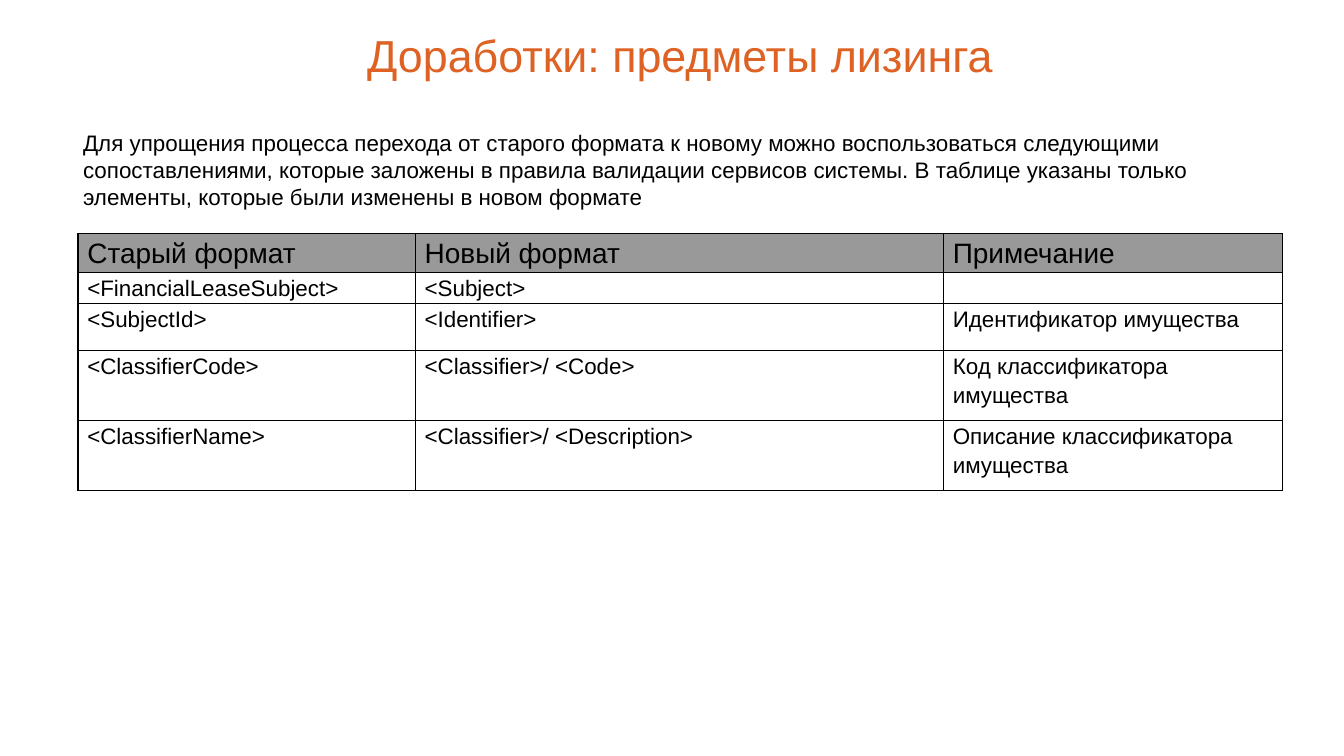
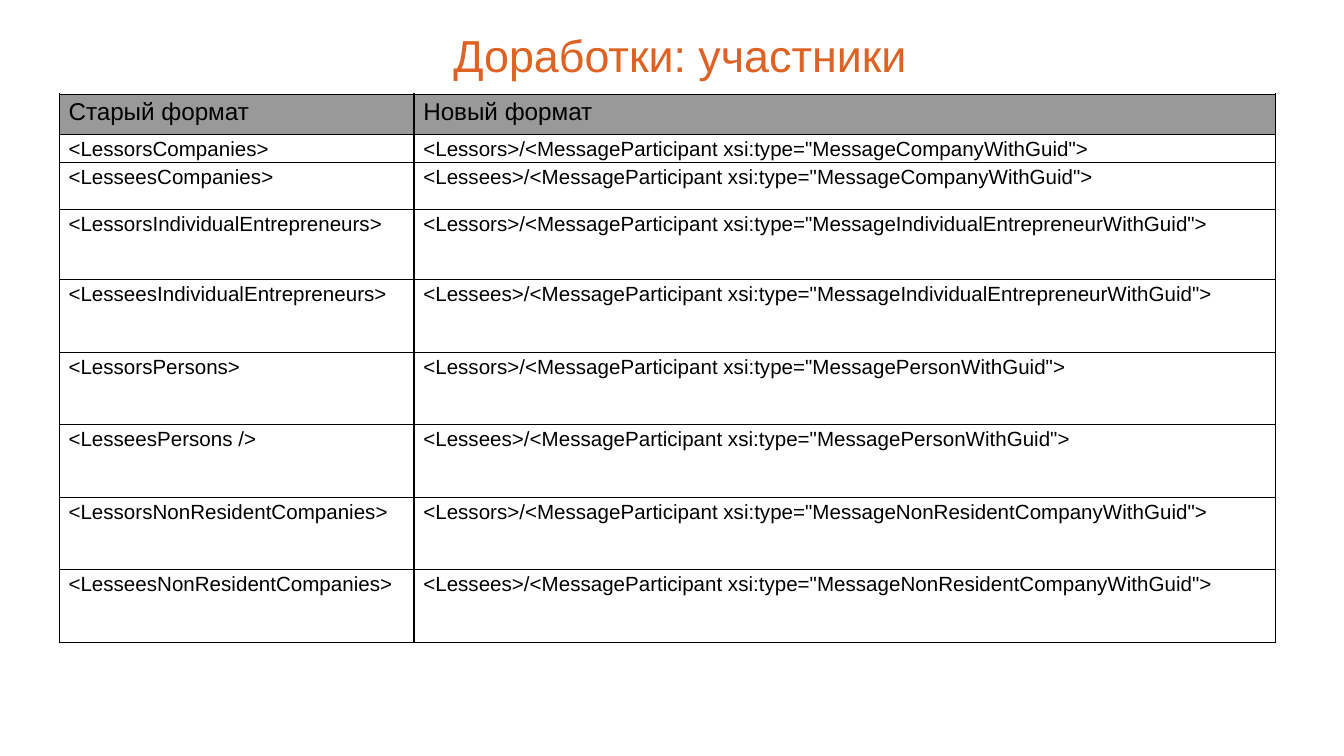
import pptx
import pptx.dml.color
import pptx.enum.text
import pptx.oxml
import pptx.oxml.ns
import pptx.util
from lxml import etree
from pptx.util import Inches, Pt

FONT = "Arial"
COLORS = {"title": "DD6224", "text": "000000", "head": "999999", "line": "000000"}
TITLE_BOX = (1.33, 0.22, 7.46, 0.43)
INTRO_BOX = (0.52, 0.86, 8.96, 0.81)
INTRO = (
    "Для упрощения процесса перехода от старого формата к новому можно "
    "воспользоваться следующими сопоставлениями, которые заложены в правила "
    "валидации сервисов системы. В таблице указаны только элементы, которые "
    "были изменены в новом формате"
)

PARTIES = [
    ("<LessorsCompanies>", "Lessors", "Company"),
    ("<LesseesCompanies>", "Lessees", "Company"),
    ("<LessorsIndividualEntrepreneurs>", "Lessors", "IndividualEntrepreneur"),
    ("<LesseesIndividualEntrepreneurs>", "Lessees", "IndividualEntrepreneur"),
    ("<LessorsPersons>", "Lessors", "Person"),
    ("<LesseesPersons />", "Lessees", "Person"),
    ("<LessorsNonResidentCompanies>", "Lessors", "NonResidentCompany"),
    ("<LesseesNonResidentCompanies>", "Lessees", "NonResidentCompany"),
]

SLIDES = [
    {
        "title": "Доработки: предметы лизинга",
        "intro": INTRO,
        "at": (0.58, 1.74),
        "cols": [2.51, 3.93, 2.52],
        "rows": [0.18, 0.18, 0.35, 0.52, 0.52],
        "sizes": (15, 12),
        "cells": [
            ("Старый формат", "Новый формат", "Примечание"),
            ("<FinancialLeaseSubject>", "<Subject>", ""),
            ("<SubjectId>", "<Identifier>", "Идентификатор имущества"),
            ("<ClassifierCode>", "<Classifier>/ <Code>",
             "Код классификатора имущества"),
            ("<ClassifierName>", "<Classifier>/ <Description>",
             "Описание классификатора имущества"),
        ],
    },
    {
        "title": "Доработки: участники",
        "at": (0.44, 0.7),
        "cols": [2.64, 6.41],
        "rows": [0.3, 0.18, 0.35, 0.52] + [0.54] * 5,
        "sizes": (13, 11),
        "cells": [("Старый формат", "Новый формат")] + [
            (old, f'<{side}>/<MessageParticipant xsi:type="Message{kind}WithGuid">')
            for old, side, kind in PARTIES
        ],
    },
]


def rgb(name):
    return pptx.dml.color.RGBColor.from_string(COLORS[name])


def add_run(para, text, size, color):
    run = para.add_run()
    run.text = text
    run.font.name = FONT
    run.font.size = Pt(size)
    run.font.color.rgb = rgb(color)


def add_text(slide, box, text, size, color, inset):
    frame = slide.shapes.add_textbox(*map(Inches, box)).text_frame
    frame.word_wrap = True
    frame.auto_size = pptx.enum.text.MSO_AUTO_SIZE.SHAPE_TO_FIT_TEXT
    frame.margin_left = frame.margin_right = Inches(inset)
    frame.margin_top = frame.margin_bottom = Inches(inset)
    para = frame.paragraphs[0]
    add_run(para, text, size, color)
    return para


def add_title(slide, text):
    para = add_text(slide, TITLE_BOX, text, 24, "title", 0.03)
    para.alignment = pptx.enum.text.PP_ALIGN.CENTER
    para.line_spacing = 0.9


def add_edges(cell):
    props = cell._tc.get_or_add_tcPr()
    for side in "LRTB":
        props.append(pptx.oxml.parse_xml(
            f'<a:ln{side} {pptx.oxml.ns.nsdecls("a")} w="{Pt(0.68)}">'
            f'<a:solidFill><a:srgbClr val="{COLORS["line"]}"/></a:solidFill>'
            f"</a:ln{side}>"))


def fill_cell(cell, text, size, head):
    cell.margin_left = cell.margin_right = Inches(0.07)
    cell.margin_top = cell.margin_bottom = 0
    add_edges(cell)
    if head:
        cell.fill.solid()
        cell.fill.fore_color.rgb = rgb("head")
    else:
        cell.fill.background()
    para = cell.text_frame.paragraphs[0]
    para.line_spacing = 1.15
    para.space_before = para.space_after = Pt(12)
    if text:
        add_run(para, text, size, "text")
    else:
        # An empty cell still sets its row height by the size of its end mark.
        tag = pptx.oxml.ns.qn("a:endParaRPr")
        etree.SubElement(para._p, tag, sz=str(size * 100))


def add_grid(slide, data):
    cols, rows = data["cols"], data["rows"]
    box = (*data["at"], sum(cols), sum(rows))
    grid = slide.shapes.add_table(len(rows), len(cols), *map(Inches, box)).table
    grid.first_row = grid.horz_banding = False
    for col, width in zip(grid.columns, cols):
        col.width = Inches(width)
    for row, height in zip(grid.rows, rows):
        row.height = Inches(height)
    for i, line in enumerate(data["cells"]):
        for j, text in enumerate(line):
            fill_cell(grid.cell(i, j), text, data["sizes"][i > 0], i == 0)


def main():
    deck = pptx.Presentation()
    deck.slide_width = Inches(10)
    deck.slide_height = deck.slide_width * 9 // 16
    for data in SLIDES:
        slide = deck.slides.add_slide(deck.slide_layouts[6])
        add_title(slide, data["title"])
        add_grid(slide, data)
        if "intro" in data:
            add_text(slide, INTRO_BOX, data["intro"], 12, "text", 0.1)
    deck.save("out.pptx")


if __name__ == "__main__":
    main()
